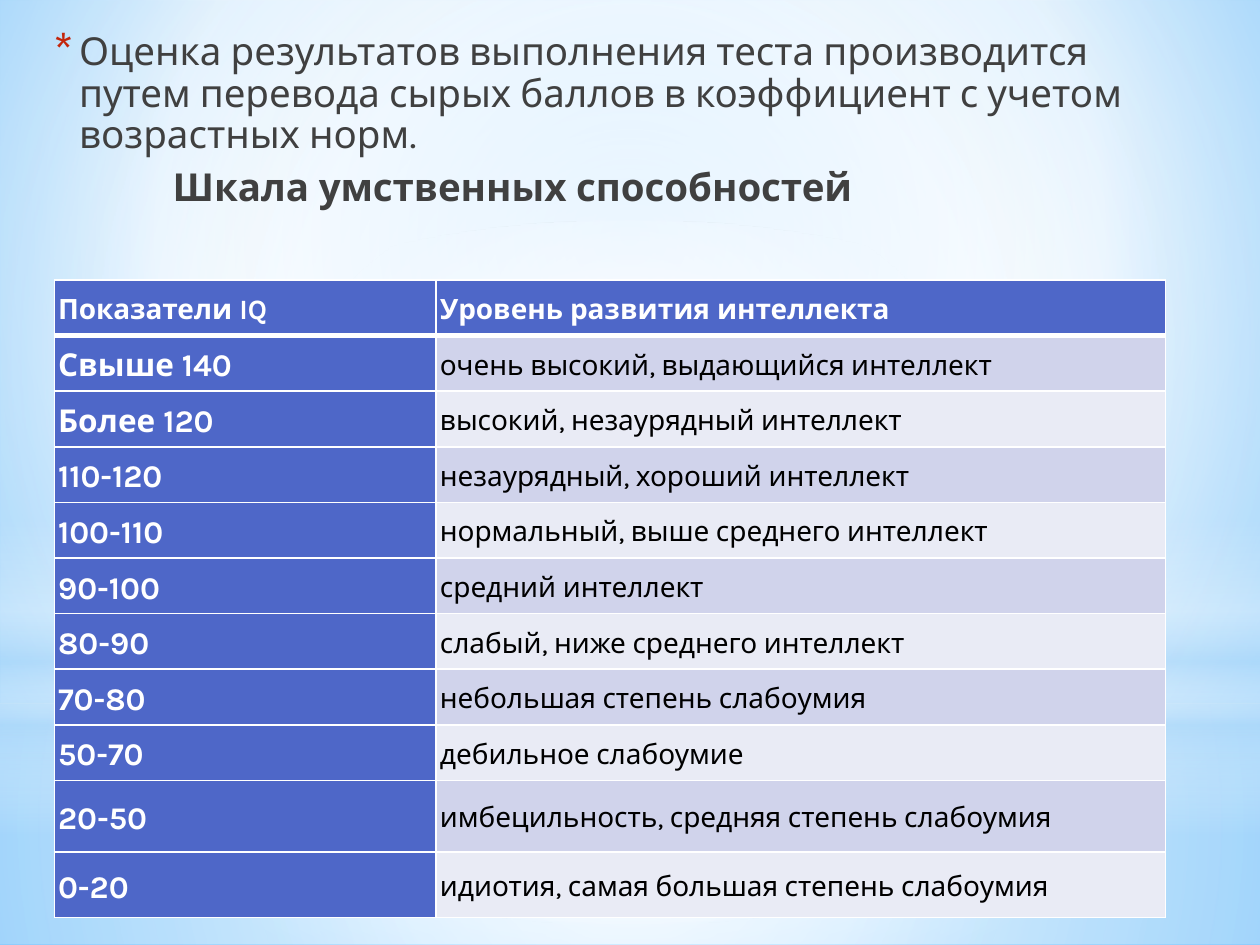
from dataclasses import dataclass
from typing import NamedTuple, Optional

from pptx import Presentation
from pptx.dml.color import RGBColor
from pptx.enum.shapes import MSO_SHAPE
from pptx.enum.text import MSO_ANCHOR, MSO_AUTO_SIZE, PP_ALIGN
from pptx.oxml import parse_xml
from pptx.oxml.ns import nsdecls, qn
from pptx.util import Pt


@dataclass(frozen=True)
class Theme:
    font: str = "Karla"
    text: str = "404040"
    bullet: str = "C3260C"
    accent: str = "4E67C8"
    white: str = "FFFFFF"
    black: str = "000000"
    sky: str = "B4DCFA"
    bands: tuple = ("D0D3EB", "E9EBF5")
    body_size: float = 22
    score_size: float = 18
    cell_size: float = 16
    rule: float = 1
    header_rule: float = 3


THEME = Theme()


class Stop(NamedTuple):
    position: int
    color: str
    opacity: int = 100


class Glow(NamedTuple):
    shape: MSO_SHAPE
    top: float
    height: float
    stops: tuple
    angle: Optional[int] = None


class Level(NamedTuple):
    score: str
    meaning: str
    height: float = 31.8


CENTER = (50, 50, 50, 50)
BACKDROP = (Stop(0, "9ED5FF"), Stop(60, THEME.white), Stop(100, "5BB9FF"))
GLOWS = (
    Glow(MSO_SHAPE.RECTANGLE, 402, 138,
         (Stop(0, THEME.white, 91), Stop(37, THEME.white, 76), Stop(100, THEME.sky, 79))),
    Glow(MSO_SHAPE.RECTANGLE, 0, 402,
         (Stop(0, THEME.white, 89), Stop(48, THEME.white, 62), Stop(100, THEME.sky, 79))),
    Glow(MSO_SHAPE.RECTANGLE, 297, 180,
         (Stop(0, THEME.white, 0), Stop(29, THEME.white, 30), Stop(45, THEME.sky, 40),
          Stop(55, THEME.white, 26), Stop(65, THEME.sky, 60), Stop(100, THEME.white, 0)), 90),
    Glow(MSO_SHAPE.OVAL, 126, 402,
         (Stop(0, THEME.white), Stop(56, THEME.white, 0))),
)
INTRO = ("Оценка результатов выполнения теста производится путем перевода "
         "сырых баллов в коэффициент с учетом возрастных норм.")
HEADING = "Шкала умственных способностей"
LEVELS = (
    Level("Показатели IQ", "Уровень развития интеллекта"),
    Level("Свыше 140", "очень высокий, выдающийся интеллект"),
    Level("Более 120", "высокий, незаурядный интеллект"),
    Level("110-120", "незаурядный, хороший интеллект"),
    Level("100-110", "нормальный, выше среднего интеллект"),
    Level("90-100", "средний интеллект"),
    Level("80-90", "слабый, ниже среднего интеллект"),
    Level("70-80", "небольшая степень слабоумия"),
    Level("50-70", "дебильное слабоумие"),
    Level("20-50", "имбецильность, средняя степень слабоумия", 41),
    Level("0-20", "идиотия, самая большая степень слабоумия", 37.4),
)
COLUMN_WIDTHS = (218.2, 416.8)


def apply_gradient(properties, stops: tuple, focus=CENTER, angle=None) -> None:
    """Replace the empty fill of a properties element by a gradient."""
    colors = "".join(
        f'<a:gs pos="{stop.position * 1000}"><a:srgbClr val="{stop.color}">'
        f'<a:alpha val="{stop.opacity * 1000}"/></a:srgbClr></a:gs>' for stop in stops)
    if angle is None:
        left, top, right, bottom = (side * 1000 for side in focus)
        direction = (f'<a:path path="circle"><a:fillToRect l="{left}" t="{top}" '
                     f'r="{right}" b="{bottom}"/></a:path>')
    else:
        direction = f'<a:lin ang="{angle * 60000}" scaled="0"/>'
    gradient = parse_xml(f'<a:gradFill {nsdecls("a")} rotWithShape="1">'
                         f'<a:gsLst>{colors}</a:gsLst>{direction}</a:gradFill>')
    properties.replace(properties.find(qn("a:noFill")), gradient)


def draw_glow(slide, glow: Glow) -> None:
    shape = slide.shapes.add_shape(glow.shape, 0, Pt(glow.top), Pt(720), Pt(glow.height))
    shape.shadow.inherit = False
    shape.line.fill.background()
    shape.fill.background()
    apply_gradient(shape.element.spPr, glow.stops, angle=glow.angle)


def format_text(paragraph, size: float, color: str, bold: bool) -> None:
    for run in paragraph.runs:
        run.font.name = THEME.font
        run.font.size = Pt(size)
        run.font.bold = bold
        run.font.color.rgb = RGBColor.from_string(color)


def set_bullet(paragraph, left: float, hanging: float, mark: Optional[str] = None) -> None:
    properties = paragraph._p.get_or_add_pPr()
    properties.set("marL", str(Pt(left)))
    properties.set("indent", str(-Pt(hanging)))
    parts = ["<a:buNone {}/>"] if mark is None else [
        f'<a:buClr {{}}><a:srgbClr val="{THEME.bullet}"/></a:buClr>',
        '<a:buSzPct {} val="130000"/>',
        f'<a:buFont {{}} typeface="{THEME.font}"/>',
        f'<a:buChar {{}} char="{mark}"/>']
    for part in parts:
        properties.append(parse_xml(part.format(nsdecls("a"))))


def write_body(body) -> None:
    body.left, body.top, body.width, body.height = Pt(20), Pt(15), Pt(675), Pt(505)
    frame = body.text_frame
    frame.auto_size = MSO_AUTO_SIZE.NONE
    frame.text = f"{INTRO}\n{HEADING}"
    intro, heading = frame.paragraphs
    for paragraph, before in ((intro, 0), (heading, 3.3)):
        paragraph.line_spacing = 0.9
        paragraph.space_before = Pt(before)
        paragraph.space_after = Pt(3)
        format_text(paragraph, THEME.body_size, THEME.text, paragraph is heading)
    set_bullet(intro, left=18, hanging=14.4, mark="*")
    set_bullet(heading, left=71.5, hanging=0)


def set_borders(cell, top: float, bottom: float) -> None:
    widths = {"lnL": THEME.rule, "lnR": THEME.rule, "lnT": top, "lnB": bottom}
    properties = cell._tc.get_or_add_tcPr()
    for index, (side, width) in enumerate(widths.items()):
        properties.insert(index, parse_xml(
            f'<a:{side} {nsdecls("a")} w="{Pt(width)}"><a:solidFill>'
            f'<a:srgbClr val="{THEME.white}"/></a:solidFill></a:{side}>'))


def fill_cell(cell, text: str, row: int, is_score: bool) -> None:
    is_header = row == 0
    strong = is_header or is_score
    cell.margin_left = cell.margin_right = cell.margin_top = cell.margin_bottom = Pt(2.2)
    cell.vertical_anchor = MSO_ANCHOR.MIDDLE
    cell.fill.solid()
    cell.fill.fore_color.rgb = RGBColor.from_string(
        THEME.accent if strong else THEME.bands[(row - 1) % 2])
    set_borders(cell, top=THEME.header_rule if row == 1 else THEME.rule,
                bottom=THEME.header_rule if is_header else THEME.rule)
    cell.text_frame.text = text
    paragraph = cell.text_frame.paragraphs[0]
    paragraph.alignment = PP_ALIGN.JUSTIFY
    paragraph.line_spacing = 1.15
    size = THEME.score_size if is_score and not is_header else THEME.cell_size
    format_text(paragraph, size, THEME.white if strong else THEME.black, strong)


def draw_scale(slide) -> None:
    scale = slide.shapes.add_table(
        len(LEVELS), len(COLUMN_WIDTHS), Pt(31), Pt(160), Pt(sum(COLUMN_WIDTHS)),
        Pt(sum(level.height for level in LEVELS))).table
    for column, width in zip(scale.columns, COLUMN_WIDTHS):
        column.width = Pt(width)
    for row, level in enumerate(LEVELS):
        scale.rows[row].height = Pt(level.height)
        fill_cell(scale.cell(row, 0), level.score, row, is_score=True)
        fill_cell(scale.cell(row, 1), level.meaning, row, is_score=False)


def main() -> None:
    deck = Presentation()
    deck.slide_width, deck.slide_height = Pt(720), Pt(540)
    slide = deck.slides.add_slide(deck.slide_layouts[1])
    title, body = slide.placeholders
    title.element.getparent().remove(title.element)
    slide.background.fill.background()
    apply_gradient(slide.element.find(".//" + qn("p:bgPr")), BACKDROP, (20, 10, 20, 60))
    for glow in GLOWS:
        draw_glow(slide, glow)
    slide.shapes.element.append(body.element)  # text in front of the glows
    write_body(body)
    draw_scale(slide)
    deck.save("out.pptx")


if __name__ == "__main__":
    main()
